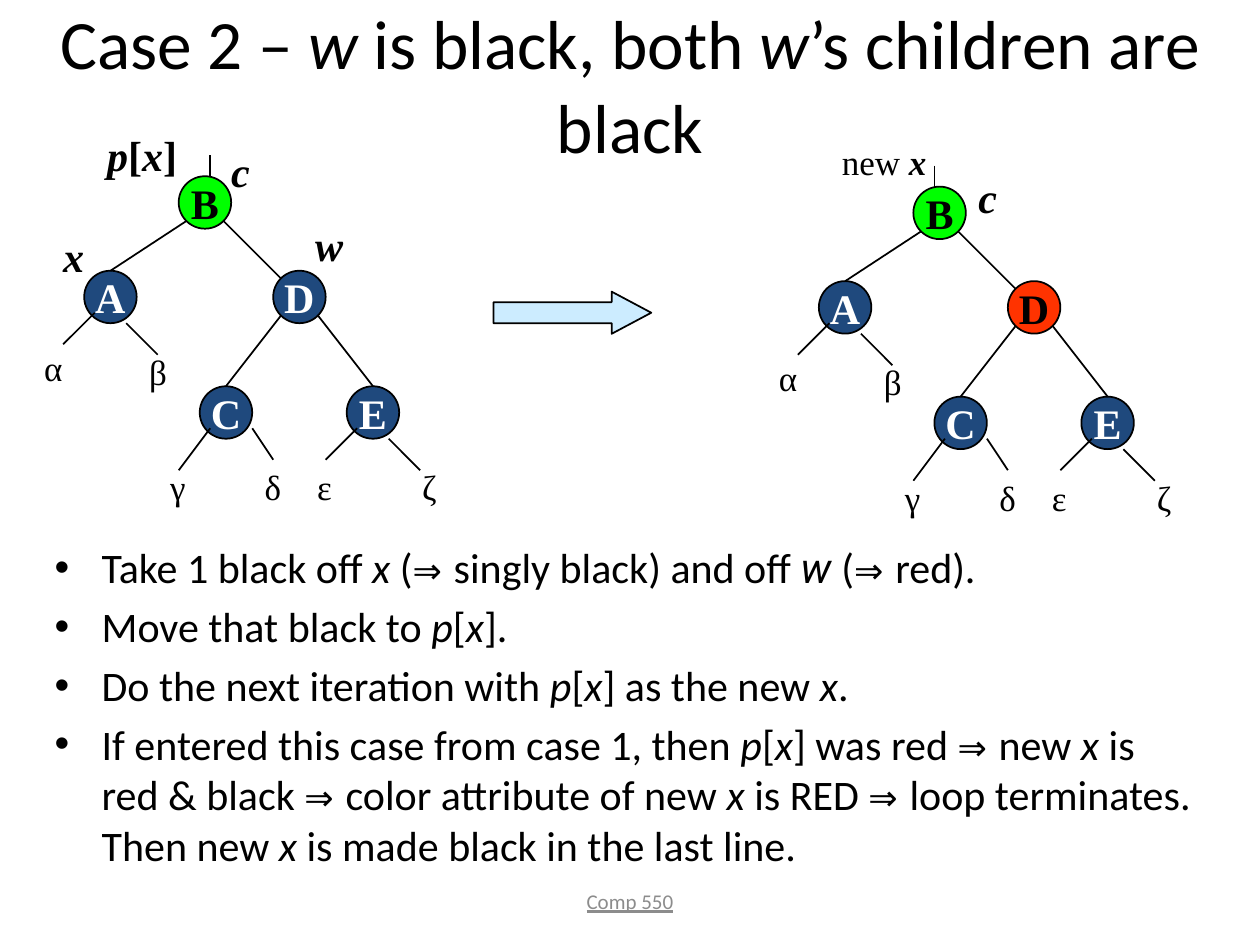
from lxml.etree import SubElement
from pptx import Presentation
from pptx.dml.color import RGBColor
from pptx.enum.shapes import MSO_CONNECTOR, MSO_SHAPE
from pptx.enum.text import MSO_ANCHOR, MSO_AUTO_SIZE, PP_ALIGN
from pptx.oxml.ns import qn
from pptx.util import Cm, Pt

COLORS = {
    "ink": "000000",
    "paper": "FFFFFF",
    "black_node": "1F497D",
    "red_node": "FF3300",
    "any_node": "00FF00",
    "arrow": "CCECFF",
    "footer": "8C8C8C",
}
SERIF = "Times New Roman"
SANS = "Calibri"

GRID = 2.54 / 12
NODE_SIZE = 5
NODES = {"B": (14, 2), "A": (5, 11), "D": (23, 11), "C": (16, 22), "E": (30, 22)}
NEAR, FAR = 0.15, 0.85
EDGES = [
    ("B", (NEAR, FAR), "A", (0.5, 0)),
    ("B", (FAR, FAR), "D", (NEAR, NEAR)),
    ("D", (NEAR, FAR), "C", (0.5, 0)),
    ("D", (FAR, FAR), "E", (0.5, 0)),
]
SUBTREES = [
    ("α", (6, 15), (3, 18), (0, 17.6), 0.96),
    ("β", (9, 16), (12, 19), (10, 18), 0.9),
    ("γ", (17, 26), (14, 30), (12, 29), 0.82),
    ("δ", (21, 26), (23, 29), (21, 29), 0.86),
    ("ε", (31, 26), (28, 29), (26, 29), 0.82),
    ("ζ", (34, 27), (37, 30), (36, 29), 0.86),
]


def italic(text, **options):
    return text, {"italic": True, **options}


ARROW = [("⇒", {"size": 20}), (" ", {"font": "Arial"})]
BULLETS = [
    ["Take 1 black off ", italic("x "), "(", *ARROW, "singly black) and off ",
     italic("w ", font="Roboto"), "(", *ARROW, "red)."],
    ["Move that black to ", italic("p"), "[", italic("x"), "]."],
    ["Do the next iteration with ", italic("p"), "[", italic("x"),
     "] as the new ", italic("x"), "."],
    ["If entered this case from case 1, then ", italic("p"), "[", italic("x"),
     "] was red ", *ARROW, "new ", italic("x "), "is red & black ", *ARROW,
     "color attribute of new ", italic("x "), "is RED ", *ARROW,
     "loop terminates. Then new ", italic("x "), "is made black in the last line."],
]


def rgb(name):
    return RGBColor.from_string(COLORS[name])


def write(paragraph, runs, font=SANS, size=24, color="ink", bold=False,
          italic=False, underline=False, align=PP_ALIGN.LEFT):
    paragraph.alignment = align
    base = dict(font=font, size=size, bold=bold, italic=italic)
    for item in runs:
        text, changes = (item, {}) if isinstance(item, str) else item
        style = {**base, **changes}
        run = paragraph.add_run()
        run.text = text
        run.font.name = style["font"]
        run.font.size = Pt(style["size"])
        run.font.bold = style["bold"]
        run.font.italic = style["italic"]
        run.font.underline = underline
        run.font.color.rgb = rgb(color)


def add_shape(slide, kind, left, top, width, height, fill):
    shape = slide.shapes.add_shape(kind, Cm(left), Cm(top), Cm(width), Cm(height))
    shape.shadow.inherit = False
    shape.fill.solid()
    shape.fill.fore_color.rgb = rgb(fill)
    shape.line.color.rgb = rgb("ink")
    shape.line.width = Pt(1)
    return shape


def add_line(slide, start, end):
    line = slide.shapes.add_connector(
        MSO_CONNECTOR.STRAIGHT, *(Cm(value) for value in (*start, *end)))
    line.line.color.rgb = rgb("ink")
    line.line.width = Pt(1)
    SubElement(line._element.spPr, qn("a:effectLst"))


def add_label(slide, position, width, runs, size, wrap=False, **style):
    height = size * 0.0353 * 1.2 + 0.25
    box = slide.shapes.add_textbox(*(Cm(value) for value in (*position, width, height)))
    box.text_frame.word_wrap = wrap
    box.text_frame.auto_size = MSO_AUTO_SIZE.SHAPE_TO_FIT_TEXT
    write(box.text_frame.paragraphs[0], runs, font=SERIF, size=size, **style)


def add_title(slide, left, top, width, height):
    title = slide.shapes.title
    title.left, title.top, title.width, title.height = map(Cm, (left, top, width, height))
    frame = title.text_frame
    frame.auto_size = MSO_AUTO_SIZE.NONE
    frame.vertical_anchor = MSO_ANCHOR.MIDDLE
    write(frame.paragraphs[0],
          ["Case 2 – ", italic("w"), " is black, both ", italic("w"),
           "’s children are black"],
          size=39.6, align=PP_ALIGN.CENTER)


def add_tree(slide, left, top, stem, d_fill, captions):
    def at(x, y):
        return left + x * GRID, top + y * GRID

    def on_node(name, fraction):
        return at(*(corner + part * NODE_SIZE
                    for corner, part in zip(NODES[name], fraction)))

    fills = {"B": "any_node", "D": d_fill}
    side = NODE_SIZE * GRID
    for name, corner in NODES.items():
        fill = fills.get(name, "black_node")
        node = add_shape(slide, MSO_SHAPE.OVAL, *at(*corner), side, side, fill)
        frame = node.text_frame
        frame.word_wrap = False
        frame.vertical_anchor = MSO_ANCHOR.MIDDLE
        write(frame.paragraphs[0], [name], font=SERIF, bold=True,
              color="paper" if fill == "black_node" else "ink",
              align=PP_ALIGN.CENTER)

    add_line(slide, at(stem, 0), at(stem, 2))
    for parent, start, child, end in EDGES:
        add_line(slide, on_node(parent, start), on_node(child, end))
    for letter, start, end, corner, width in SUBTREES:
        add_line(slide, at(*start), at(*end))
        add_label(slide, at(*corner), width, [letter], 20)
    for corner, width, runs, style in captions:
        add_label(slide, at(*corner), width, runs, **style)


def add_step_arrow(slide, left, top, width, height):
    arrow = add_shape(slide, MSO_SHAPE.RIGHT_ARROW, left, top, width, height, "arrow")
    arrow.adjustments[0] = 0.5
    arrow.adjustments[1] = 0.94


def add_bullets(slide, left, top, width, height):
    box = slide.shapes.add_textbox(Cm(left), Cm(top), Cm(width), Cm(height))
    frame = box.text_frame
    frame.word_wrap = True
    for index, runs in enumerate(BULLETS):
        paragraph = frame.add_paragraph() if index else frame.paragraphs[0]
        paragraph.space_before = Pt(4.8)
        write(paragraph, runs)
        properties = paragraph._p.get_or_add_pPr()
        properties.set("marL", str(Cm(0.95)))
        properties.set("indent", str(Cm(-0.95)))
        SubElement(properties, qn("a:buFont"), typeface="Arial")
        SubElement(properties, qn("a:buChar"), char="•")


def add_footer(slide, left, top, width, height):
    box = slide.shapes.add_textbox(Cm(left), Cm(top), Cm(width), Cm(height))
    box.text_frame.word_wrap = True
    box.text_frame.vertical_anchor = MSO_ANCHOR.MIDDLE
    write(box.text_frame.paragraphs[0], ["Comp 550"], size=12, color="footer",
          underline=True, align=PP_ALIGN.CENTER)


def main():
    presentation = Presentation()
    presentation.slide_width = Cm(25.4)
    presentation.slide_height = Cm(19.05)
    slide = presentation.slides.add_slide(presentation.slide_layouts[5])

    strong = dict(size=24, bold=True, italic=True)
    upright = {"italic": False}
    before = [
        ((1.8, 6.6), 0.94, ["x"], strong),
        ((25.8, 5.5), 1.07, ["w"], strong),
        ((17.8, -1.5), 0.89, ["c"], strong),
        ((6, -3), 1.93, ["p", ("[", upright), "x", ("]", upright)], strong),
    ]
    after = [
        ((6, -3), 2.54, ["new ", italic("x", bold=True)], dict(size=20, wrap=True)),
        ((19, 0), 0.89, ["c"], strong),
    ]

    add_title(slide, 0, 0.42, 25.4, 2.54)
    add_bullets(slide, 0.85, 10.8, 23.5, 7.2)
    add_footer(slide, 8.68, 17.65, 8.04, 1.02)
    add_tree(slide, 0.64, 3.13, 17, "black_node", before)
    add_step_arrow(slide, 9.95, 5.88, 3.18, 0.85)
    add_tree(slide, 15.45, 3.34, 16, "red_node", after)
    presentation.save("out.pptx")


if __name__ == "__main__":
    main()
